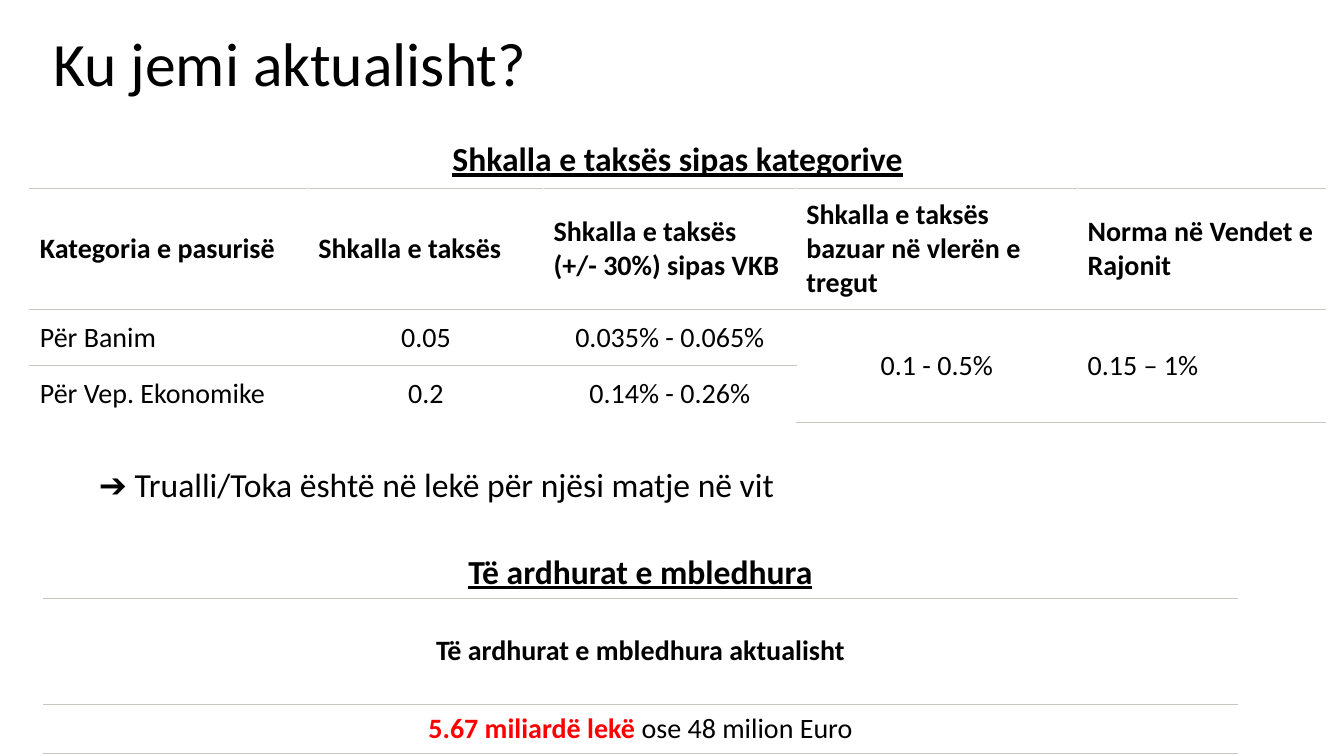
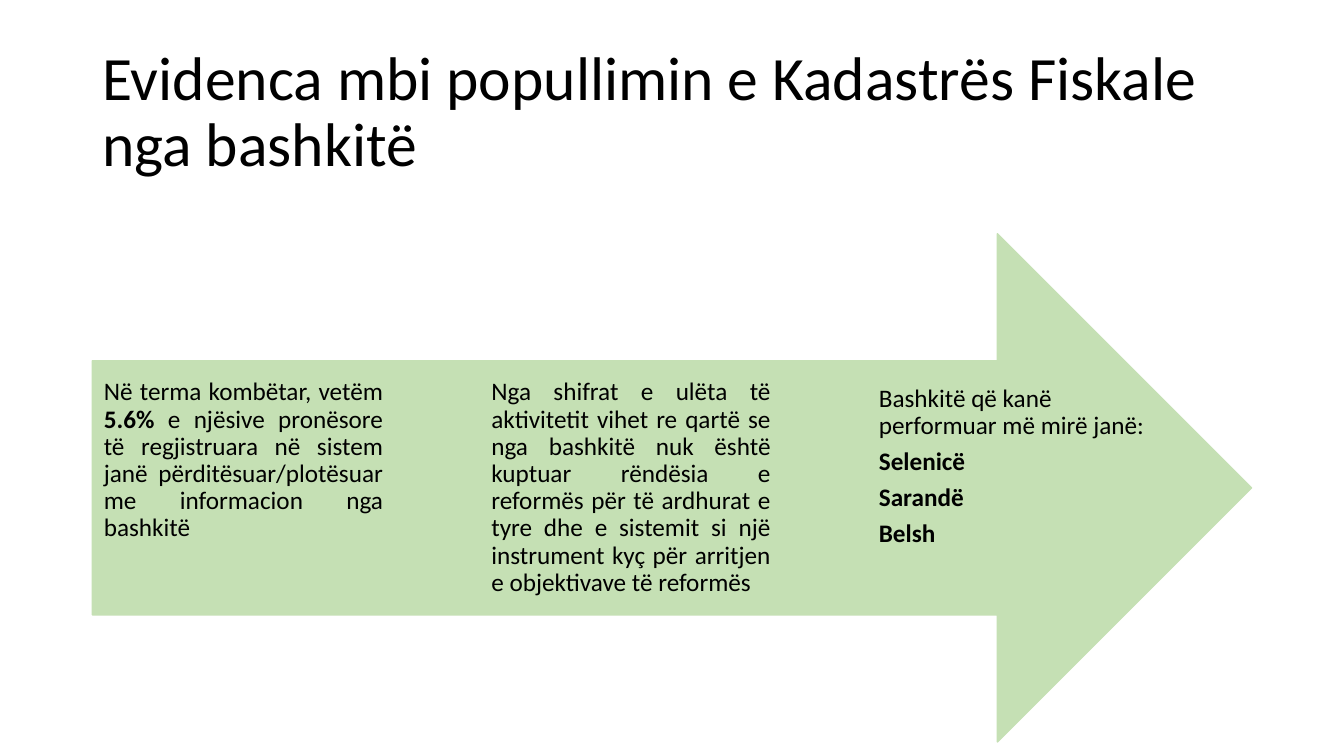
from pptx import Presentation
from pptx.dml.color import RGBColor
from pptx.enum.shapes import MSO_SHAPE
from pptx.enum.text import MSO_ANCHOR, PP_ALIGN
from pptx.oxml.ns import qn
from pptx.util import Pt
from lxml.etree import SubElement

rgb = RGBColor.from_string
FONT, BLACK, WHITE, RED = "Calibri", "000000", "FFFFFF", "FF0000"
RULE, GREEN = "C7C6C1", "C5E0B4"
LEFT, CENTER, JUSTIFY = PP_ALIGN.LEFT, PP_ALIGN.CENTER, PP_ALIGN.JUSTIFY


def write(tf, paras, size, align=LEFT, spacing=1.0, after=0, underline=False):
    """Each paragraph is a list of (text, bold, colour) runs."""
    tf.word_wrap = True
    for i, runs in enumerate(paras):
        p = tf.add_paragraph() if i else tf.paragraphs[0]
        p.alignment, p.line_spacing, p.space_after = align, spacing, Pt(after)
        for text, bold, colour in runs:
            r = p.add_run()
            r.text = text
            f = r.font
            f.name, f.size, f.bold, f.underline = FONT, Pt(size), bold, underline
            f.color.rgb = rgb(colour)


def add_grid(s, left, top, widths, heights, cells, merges=(), open_cols=0):
    """cells maps (row, col) to (paragraphs, alignment); row 0 is the caption.
    The first open_cols columns have no rule at the foot."""
    frame = s.shapes.add_table(len(heights), len(widths), Pt(left), Pt(top),
                               Pt(sum(widths)), Pt(sum(heights)))
    tb = frame.table
    tb.first_row = tb.horz_banding = False
    for col, w in zip(tb.columns, widths):
        col.width = Pt(w)
    for row, h in zip(tb.rows, heights):
        row.height = Pt(h)
    for first, last in merges:
        tb.cell(*first).merge(tb.cell(*last))
    for i in range(len(heights)):
        for j in range(len(widths)):
            cell = tb.cell(i, j)
            cell.vertical_anchor = MSO_ANCHOR.MIDDLE
            is_open = i == len(heights) - 1 and j < open_cols
            edges = {"L": WHITE, "R": WHITE, "T": RULE if i else WHITE,
                     "B": WHITE if is_open else RULE}
            for side, colour in edges.items():
                width = Pt(0.45 if colour == RULE else 1)
                ln = SubElement(cell._tc.get_or_add_tcPr(), qn("a:ln" + side), w=str(width))
                SubElement(SubElement(ln, qn("a:solidFill")), qn("a:srgbClr"), val=colour)
            cell.fill.background()
            if (i, j) in cells:
                paras, align = cells[i, j]
                write(cell.text_frame, paras, 20 if i else 24, align, underline=i == 0)


prs = Presentation()
prs.slide_width, prs.slide_height = Pt(960), Pt(540)

# Slides and titles
slides = []
for title, x, y in [("Ku jemi aktualisht?", 31, -5),
                    ("Evidenca mbi popullimin e Kadastrës Fiskale nga bashkitë", 66, 28.8)]:
    s = prs.slides.add_slide(prs.slide_layouts[6])
    tf = s.shapes.add_textbox(Pt(x), Pt(y), Pt(828), Pt(104.4)).text_frame
    tf.vertical_anchor = MSO_ANCHOR.MIDDLE
    write(tf, [[(title, False, BLACK)]], 44, spacing=0.9)
    slides.append(s)
rates, evidence = slides

# Slide 1: note between the tables
tf = rates.shapes.add_textbox(Pt(21.6), Pt(327.6), Pt(837), Pt(36)).text_frame
tf.margin_left = Pt(49)
write(tf, [[("➔ ", True, BLACK),
            ("Trualli/Toka është në lekë për njësi matje në vit", False, BLACK)]], 24)

# Slide 1: tax rates by category
headings = [["Kategoria e pasurisë"], ["Shkalla e taksës"],
            ["Shkalla e taksës", "(+/- 30%) sipas VKB"],
            ["Shkalla e taksës bazuar në vlerën e tregut"],
            ["Norma në Vendet e Rajonit"]]
values = [["Për Banim", "0.05", "0.035% - 0.065%", "0.1 - 0.5%", "0.15 – 1%"],
          ["Për Vep. Ekonomike", "0.2", "0.14% - 0.26%"]]
cells = {(0, 0): ([[("Shkalla e taksës sipas kategorive", True, BLACK)]], CENTER)}
for j, lines in enumerate(headings):
    cells[1, j] = [[(line, True, BLACK)] for line in lines], LEFT
for i, row in enumerate(values, 2):
    for j, text in enumerate(row):
        cells[i, j] = [[(text, False, BLACK)]], CENTER if j in (1, 2, 3) else LEFT
add_grid(rates, 21.3, 94.3, [199, 168, 180.5, 201, 177], [40.3, 86.4, 40.3, 40.3], cells,
         merges=[((0, 0), (0, 4)), ((2, 3), (3, 3)), ((2, 4), (3, 4))], open_cols=3)

# Slide 1: revenue collected
revenue = [[("Të ardhurat e mbledhura", True, BLACK)],
           [("Të ardhurat e mbledhura aktualisht", True, BLACK)],
           [("5.67 miliardë lekë ", True, RED), ("ose 48 milion Euro", False, BLACK)]]
add_grid(rates, 31, 391, [853], [35.5, 75.8, 35.5],
         {(i, 0): ([runs], CENTER) for i, runs in enumerate(revenue)})

# Slide 2: arrow
sp = evidence.shapes.add_shape(MSO_SHAPE.RIGHT_ARROW, Pt(66), Pt(167), Pt(828), Pt(363))
sp.shadow.inherit = False
sp.fill.solid()
sp.fill.fore_color.rgb = sp.line.color.rgb = rgb(GREEN)
sp.line.width = Pt(1)

# Slide 2: three columns of text on the arrow
columns = [
    (256.3, JUSTIFY, [[("Në terma kombëtar, vetëm ", False, BLACK), ("5.6%", True, BLACK),
                       (" e njësive pronësore të regjistruara në sistem janë "
                        "përditësuar/plotësuar me informacion nga bashkitë", False, BLACK)]]),
    (256.3, JUSTIFY, [[("Nga shifrat e ulëta të aktivitetit vihet re qartë se nga bashkitë "
                        "nuk është kuptuar rëndësia e reformës për të ardhurat e tyre dhe e "
                        "sistemit si një instrument kyç për arritjen e objektivave të "
                        "reformës", False, BLACK)]]),
    (261, LEFT, [[("Bashkitë që kanë performuar më mirë janë:", False, BLACK)]]
     + [[(name, True, BLACK)] for name in ("Selenicë", "Sarandë", "Belsh")]),
]
for i, (y, align, paras) in enumerate(columns):
    tf = evidence.shapes.add_textbox(Pt(74.2 + 276.8 * i), Pt(y), Pt(199.5), Pt(181)).text_frame
    tf.margin_left = tf.margin_right = 0
    tf.margin_top = tf.margin_bottom = Pt(14.4)
    write(tf, paras, 18, align, spacing=0.9, after=6.3)

prs.save("out.pptx")
